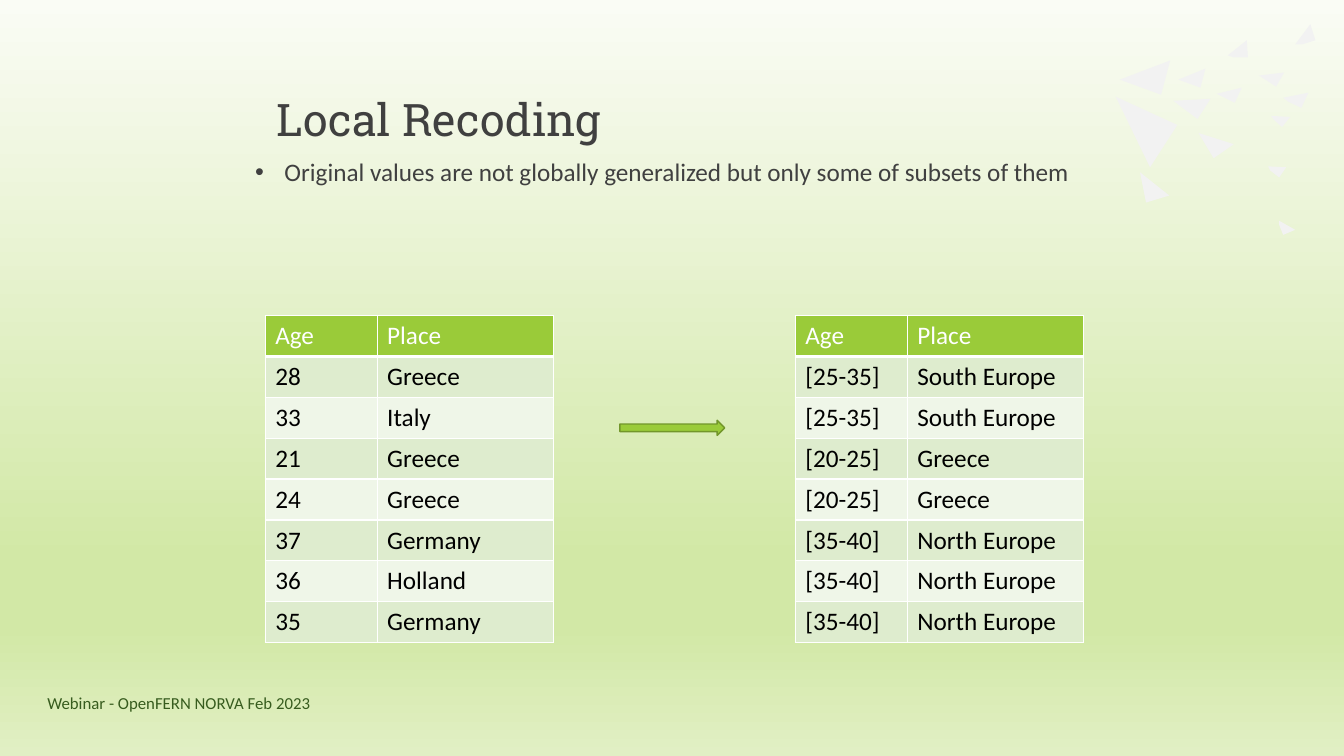
from dataclasses import dataclass
from typing import Any

from lxml import etree
from pptx import Presentation
from pptx import util as u
from pptx.dml.color import RGBColor
from pptx.enum import shapes, text
from pptx.oxml import ns

WHITE = RGBColor(0xFF, 0xFF, 0xFF)
BLACK = RGBColor(0, 0, 0)
DARK_GRAY = RGBColor(0x40, 0x40, 0x40)
PALE_GRAY = RGBColor(0xF2, 0xF2, 0xF2)
FOREST = RGBColor(0x37, 0x5C, 0x1E)
LIME = RGBColor(0x9A, 0xCB, 0x39)
LIME_EDGE = RGBColor(0x72, 0x96, 0x2A)
BANDS = (RGBColor(0xDE, 0xEC, 0xCE), RGBColor(0xEF, 0xF6, 0xE8))
BACKGROUND_STOPS = (
    (0, RGBColor(0xFA, 0xFC, 0xF5)),
    (74, RGBColor(0xD2, 0xE8, 0xA6)),
    (83, RGBColor(0xD2, 0xE8, 0xA6)),
    (100, RGBColor(0xE1, 0xEF, 0xC4)),
)

ROW_HEIGHT = 29.2
COLUMN_WIDTHS = (80, 126)
TABLE_TOP = 225.4
BULLET_INDENT = 21

SHARDS = (
    ((835.9, 43.2), (829.4, 67.7), (799.9, 56.9)),
    ((864.7, 70.6), (855.4, 85), (838.1, 72)),
    ((861.1, 49), (857.5, 62.6), (841.7, 56.9)),
    ((887, 62.6), (882, 73.4), (869, 67)),
    ((890.6, 28.8), (891.4, 41), (881.3, 41), (877, 39.6)),
    ((921.6, 83.5), (915.8, 90.7), (910.1, 85.7), (907.9, 82.8)),
    ((936, 17.3), (939.6, 28.8), (930.2, 31.7), (925.2, 31.7)),
    ((917.3, 51.8), (911.5, 61.9), (899.3, 54)),
    ((934.6, 66.2), (929.5, 77), (920.2, 72.7), (916.6, 69.8)),
    ((841, 89.3), (821.5, 119.5), (797, 69.1)),
    ((881.3, 103), (866.9, 113), (856.1, 95)),
    ((918.7, 119.5), (913.7, 126.7), (907.2, 121.7), (905.8, 118.8)),
    ((835.2, 139.7), (818.6, 144.7), (814.3, 123.1)),
    ((925.2, 164.2), (916.6, 167.8), (913.7, 160.6), (913.7, 157.7)),
)


@dataclass(frozen=True)
class Label:
    words: str
    box: tuple[float, float, float, float]
    font: str
    size: float
    color: RGBColor
    anchor: Any = text.MSO_ANCHOR.MIDDLE
    line_spacing: float = 1.0
    space_before: float = 0
    bullet: bool = False


@dataclass(frozen=True)
class DataTable:
    left: float
    rows: tuple[tuple[str, str], ...]


LABELS = (
    Label("Original values are not globally generalized but only some of subsets of them",
          (182.2, 113.8, 605.5, 137.5), "Calibri", 18, DARK_GRAY,
          text.MSO_ANCHOR.TOP, 0.9, 10, True),
    Label("Local Recoding", (197.3, 36, 607, 102.2), "Roboto Slab", 32, DARK_GRAY,
          line_spacing=0.9),
    Label("Webinar - OpenFERN NORVA Feb 2023", (33.8, 487.4, 692, 28.8), "Calibri", 12, FOREST),
)

TABLES = (
    DataTable(189.4, (("Age", "Place"), ("28", "Greece"), ("33", "Italy"), ("21", "Greece"),
                      ("24", "Greece"), ("37", "Germany"), ("36", "Holland"),
                      ("35", "Germany"))),
    DataTable(568.1, (("Age", "Place"), ("[25-35]", "South Europe"), ("[25-35]", "South Europe"),
                      ("[20-25]", "Greece"), ("[20-25]", "Greece"), ("[35-40]", "North Europe"),
                      ("[35-40]", "North Europe"), ("[35-40]", "North Europe"))),
)


def apply_format(target: Any, values: dict[str, Any]) -> None:
    for name, value in values.items():
        setattr(target, name, value)


def add_element(parent: Any, tag: str, **attributes: str) -> Any:
    return etree.SubElement(parent, ns.qn(tag), attributes)


def write_text(paragraph: Any, words: str, font: str, size: float, color: RGBColor) -> None:
    run = paragraph.add_run()
    run.text = words
    apply_format(run.font, {"name": font, "size": u.Pt(size), "bold": False})
    run.font.color.rgb = color


def paint_background(slide: Any) -> None:
    fill = slide.background.fill
    fill.gradient()
    fill.gradient_angle = 270
    stop_list = next(slide.element.iter(ns.qn("a:gsLst")))
    for stop in list(stop_list):
        stop_list.remove(stop)
    for percent, color in BACKGROUND_STOPS:
        stop = add_element(stop_list, "a:gs", pos=str(percent * 1000))
        add_element(stop, "a:srgbClr", val=str(color))


def draw_shard(slide: Any, corners: tuple[tuple[float, float], ...]) -> None:
    points = [(u.Pt(x), u.Pt(y)) for x, y in corners]
    builder = slide.shapes.build_freeform(*points[0])
    builder.add_line_segments(points[1:], close=True)
    shape = builder.convert_to_shape()
    shape.shadow.inherit = False
    shape.fill.solid()
    shape.fill.fore_color.rgb = PALE_GRAY
    shape.line.fill.background()


def draw_label(slide: Any, label: Label) -> None:
    frame = slide.shapes.add_textbox(*map(u.Pt, label.box)).text_frame
    apply_format(frame, {
        "word_wrap": True, "vertical_anchor": label.anchor,
        "margin_left": 0, "margin_top": 0, "margin_right": 0, "margin_bottom": 0,
    })
    paragraph = frame.paragraphs[0]
    apply_format(paragraph, {
        "line_spacing": label.line_spacing, "space_before": u.Pt(label.space_before),
    })
    write_text(paragraph, label.words, label.font, label.size, label.color)
    if label.bullet:
        properties = paragraph.line_spacing and paragraph._p.get_or_add_pPr()
        indent = u.Pt(BULLET_INDENT)
        properties.set("marL", str(indent))
        properties.set("indent", str(-indent))
        add_element(properties, "a:buFont", typeface="Arial")
        add_element(properties, "a:buChar", char="•")


def draw_borders(cell: Any, bottom_width: float) -> None:
    properties = cell._tc.get_or_add_tcPr()
    for side, width in (("L", 1), ("R", 1), ("T", 1), ("B", bottom_width)):
        border = add_element(properties, f"a:ln{side}", w=str(u.Pt(width)))
        fill = add_element(border, "a:solidFill")
        add_element(fill, "a:srgbClr", val=str(WHITE))


def draw_table(slide: Any, data: DataTable) -> None:
    count = len(data.rows)
    table = slide.shapes.add_table(
        count, len(COLUMN_WIDTHS), u.Pt(data.left), u.Pt(TABLE_TOP),
        u.Pt(sum(COLUMN_WIDTHS)), u.Pt(ROW_HEIGHT * count)).table
    for column, width in zip(table.columns, COLUMN_WIDTHS):
        column.width = u.Pt(width)
    for row_index, row in enumerate(data.rows):
        table.rows[row_index].height = u.Pt(ROW_HEIGHT)
        is_header = row_index == 0
        for column_index, words in enumerate(row):
            cell = table.cell(row_index, column_index)
            draw_borders(cell, 3 if is_header else 1)
            cell.fill.solid()
            cell.fill.fore_color.rgb = LIME if is_header else BANDS[(row_index - 1) % 2]
            write_text(cell.text_frame.paragraphs[0], words, "Calibri", 18,
                       WHITE if is_header else BLACK)


def draw_arrow(slide: Any) -> None:
    arrow = slide.shapes.add_shape(
        shapes.MSO_SHAPE.RIGHT_ARROW, u.Pt(442.8), u.Pt(300.2), u.Pt(74.9), u.Pt(10.8))
    arrow.shadow.inherit = False
    arrow.fill.solid()
    arrow.fill.fore_color.rgb = LIME
    arrow.line.color.rgb = LIME_EDGE
    arrow.line.width = u.Pt(1)


def main() -> None:
    presentation = Presentation()
    apply_format(presentation, {"slide_width": u.Pt(960), "slide_height": u.Pt(540)})
    slide = presentation.slides.add_slide(presentation.slide_layouts[6])
    paint_background(slide)
    for corners in SHARDS:
        draw_shard(slide, corners)
    for label in LABELS:
        draw_label(slide, label)
    for data in TABLES:
        draw_table(slide, data)
    draw_arrow(slide)
    presentation.save("out.pptx")


if __name__ == "__main__":
    main()
